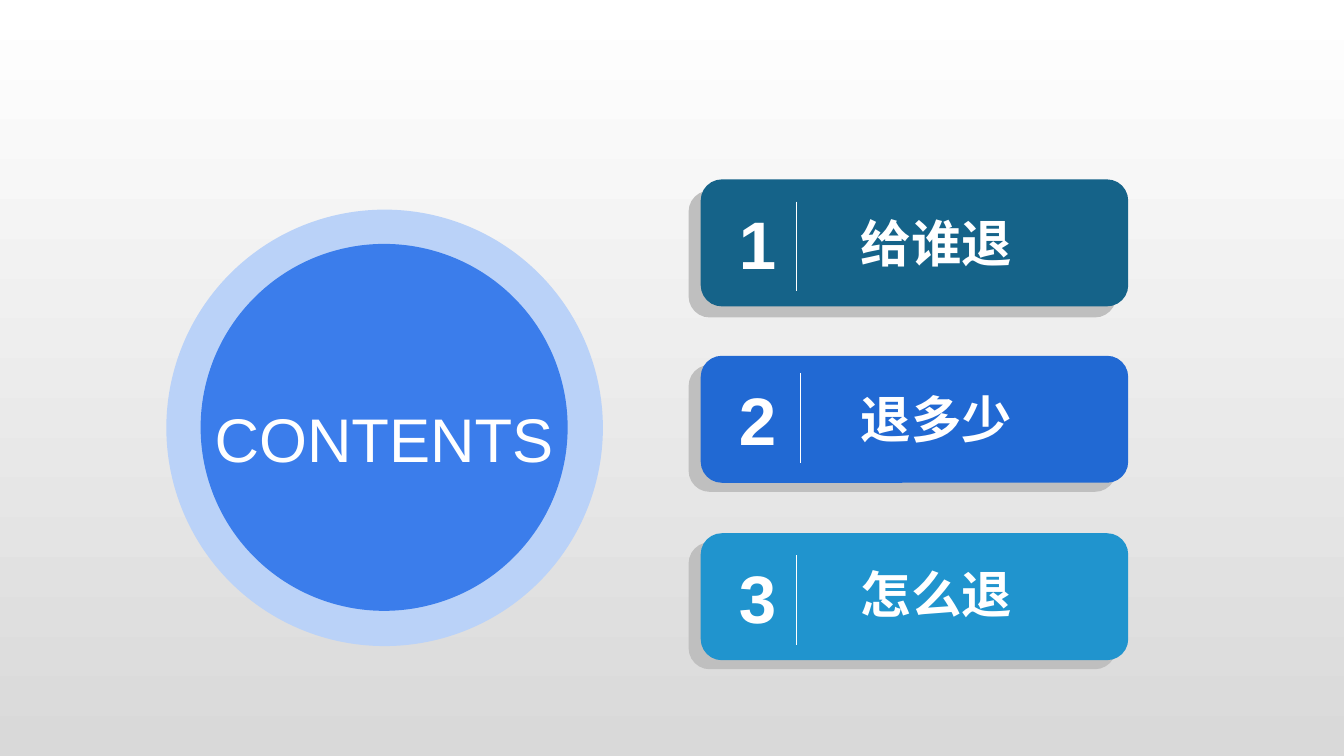
"""Build a contents slide: a round title beside three numbered topic cards."""
from dataclasses import dataclass

import pptx
import pptx.dml.color
import pptx.enum.shapes
import pptx.enum.text
import pptx.oxml
import pptx.oxml.ns
import pptx.shapes.autoshape
import pptx.shapes.shapetree
import pptx.util

Inches = pptx.util.Inches
Shape = pptx.enum.shapes.MSO_SHAPE
Shapes = pptx.shapes.shapetree._BaseGroupShapes
Box = tuple[float, float, float, float]

COLORS = {
    "white": "FFFFFF",
    "backdrop_end": "D9D9D9",
    "card_shadow": "BFBFBF",
    "teal": "156389",
    "blue": "2169D3",
    "sky": "2094CE",
    "ring": "BAD2F8",
    "disc": "3B7DEB",
}
NUMBER_FORMAT = {"name": "Arial", "size": pptx.util.Pt(48), "bold": True}
TOPIC_FORMAT = {"name": "Noto Sans CJK SC", "size": pptx.util.Pt(36), "bold": True}
TITLE_FORMAT = {"name": "Arial", "size": pptx.util.Pt(44), "bold": False}
CARD_LEFT, CARD_WIDTH, CARD_HEIGHT = 6.95, 4.24, 1.26
SHADOW_LEFT = 6.83
DIVIDER_HEIGHT = 0.89


@dataclass(frozen=True)
class Topic:
    """A card with the tops of its parts and its divider position."""

    number: str
    label: str
    color: str
    top: float
    shadow_top: float
    number_top: float
    label_top: float
    divider_left: float
    divider_top: float


@dataclass(frozen=True)
class Circle:
    """A filled circle of the title emblem."""

    left: float
    top: float
    diameter: float
    color: str


TOPICS = [
    Topic("1", "给谁退", "teal", 1.78, 1.89, 1.96, 2.06, 7.9, 2.0),
    Topic("2", "退多少", "blue", 3.53, 3.62, 3.7, 3.8, 7.94, 3.7),
    Topic("3", "怎么退", "sky", 5.29, 5.38, 5.47, 5.54, 7.9, 5.51),
]
CIRCLES = [Circle(1.65, 2.08, 4.33, "ring"), Circle(1.99, 2.42, 3.64, "disc")]


def rgb(color: str) -> pptx.dml.color.RGBColor:
    """Look up a named colour."""
    return pptx.dml.color.RGBColor.from_string(COLORS[color])


def add_filled(shapes: Shapes, kind: Shape, box: Box, color: str) -> None:
    """Draw a flat preset shape without an outline."""
    filled = shapes.add_shape(kind, *map(Inches, box))
    filled.shadow.inherit = False
    filled.fill.solid()
    filled.fill.fore_color.rgb = rgb(color)
    filled.line.fill.background()


def add_label(shapes: Shapes, text: str, box: Box, formats: dict,
              wrap: bool = True) -> pptx.shapes.autoshape.Shape:
    """Write one line of white text."""
    label = shapes.add_textbox(*map(Inches, box))
    frame = label.text_frame
    frame.word_wrap = wrap
    frame.auto_size = pptx.enum.text.MSO_AUTO_SIZE.SHAPE_TO_FIT_TEXT
    run = frame.paragraphs[0].add_run()
    run.text = text
    for attribute, value in formats.items():
        setattr(run.font, attribute, value)
    run.font.color.rgb = rgb("white")
    east_asian = pptx.oxml.parse_xml(f'<a:ea {pptx.oxml.ns.nsdecls("a")}/>')
    east_asian.set("typeface", formats["name"])
    run.font._element.append(east_asian)
    return label


def add_divider(shapes: Shapes, left: float, top: float) -> None:
    """Draw the thin upright line between number and label."""
    divider = shapes.add_connector(
        pptx.enum.shapes.MSO_CONNECTOR.STRAIGHT,
        *map(Inches, (left, top, left, top + DIVIDER_HEIGHT)))
    divider.line.color.rgb = rgb("white")
    divider.line.width = pptx.util.Pt(0.5)
    divider._element.spPr.append(
        pptx.oxml.parse_xml(f'<a:effectLst {pptx.oxml.ns.nsdecls("a")}/>'))


def add_topic(shapes: Shapes, topic: Topic) -> None:
    """Draw one grouped topic card."""
    card = shapes.add_group_shape().shapes
    for left, top, color in (
        (SHADOW_LEFT, topic.shadow_top, "card_shadow"),
        (CARD_LEFT, topic.top, topic.color),
    ):
        add_filled(card, Shape.ROUNDED_RECTANGLE,
                   (left, top, CARD_WIDTH, CARD_HEIGHT), color)
    add_label(card, topic.number, (7.23, topic.number_top, 0.59, 0.91), NUMBER_FORMAT)
    add_divider(card, topic.divider_left, topic.divider_top)
    add_label(card, topic.label, (8.44, topic.label_top, 2.14, 0.71), TOPIC_FORMAT)


def main() -> None:
    """Assemble and save the slide."""
    deck = pptx.Presentation()
    deck.slide_width, deck.slide_height = Inches(13.33), Inches(7.5)
    slide = deck.slides.add_slide(deck.slide_layouts[6])

    backdrop = slide.background.fill
    backdrop.gradient()
    backdrop.gradient_angle = 270
    for stop, position, color in zip(
            backdrop.gradient_stops, (0, 1), ("white", "backdrop_end")):
        stop.position = position
        stop.color.rgb = rgb(color)

    for topic in TOPICS:
        add_topic(slide.shapes, topic)
    for circle in CIRCLES:
        add_filled(slide.shapes, Shape.OVAL,
                   (circle.left, circle.top, circle.diameter, circle.diameter),
                   circle.color)
    title = add_label(slide.shapes, "CONTENTS", (2.03, 3.92, 3.62, 0.84),
                      TITLE_FORMAT, wrap=False).text_frame
    title.vertical_anchor = pptx.enum.text.MSO_ANCHOR.MIDDLE
    title.paragraphs[0].alignment = pptx.enum.text.PP_ALIGN.JUSTIFY
    deck.save("out.pptx")


if __name__ == "__main__":
    main()
